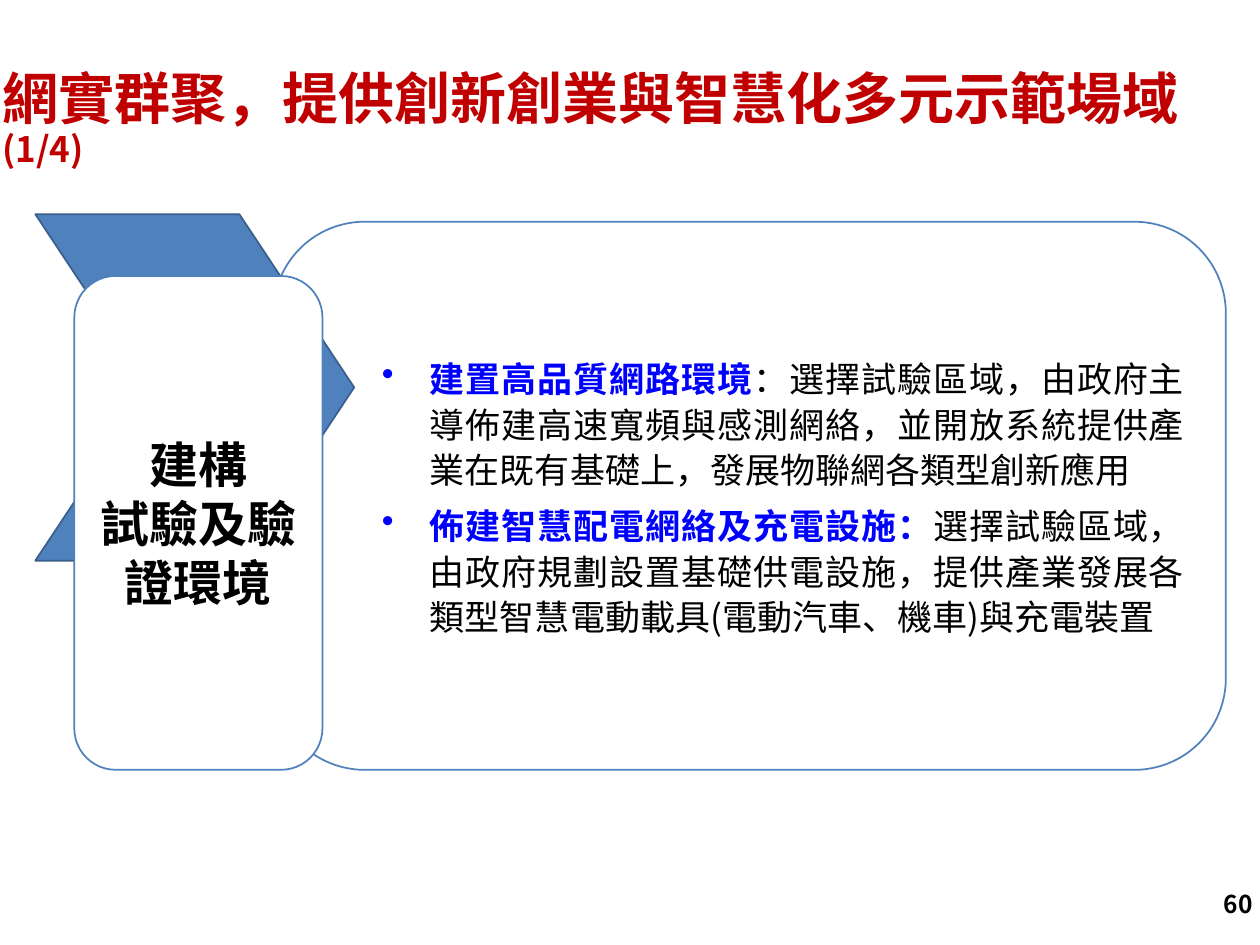
"""Build the slide on demonstration fields for testing and verification."""
from dataclasses import dataclass

import lxml.etree
import pptx
import pptx.dml.color
import pptx.enum.shapes
import pptx.enum.text
import pptx.oxml.ns
import pptx.util

Pt = pptx.util.Pt
Align = pptx.enum.text.PP_ALIGN
Preset = pptx.enum.shapes.MSO_SHAPE

SANS = "Noto Sans CJK SC"
MONO = "Noto Sans Mono"
BLACK, WHITE, RED = "000000", "FFFFFF", "C00000"
EMPHASIS, ACCENT, ACCENT_EDGE = "0000FF", "4F81BD", "3A5F8C"


@dataclass(frozen=True)
class Box:
    left: float
    top: float
    width: float
    height: float

    def lengths(self) -> list:
        return [Pt(n) for n in (self.left, self.top, self.width, self.height)]


@dataclass(frozen=True)
class Panel:
    box: Box
    preset: int
    fill: str
    edge: str


@dataclass(frozen=True)
class Measure:
    heading: str
    detail: str


CONTENT = Panel(Box(156.2, 126.7, 544.3, 313.2), Preset.ROUNDED_RECTANGLE, WHITE, ACCENT)
ARROW = Panel(Box(20.2, 122.4, 182.2, 198), Preset.CHEVRON, ACCENT, ACCENT_EDGE)
LABEL = Panel(Box(42.5, 157.7, 141.8, 282.2), Preset.ROUNDED_RECTANGLE, WHITE, ACCENT)
TITLE_BOX = Box(-5.8, 31, 730.8, 75.6)
NUMBER_BOX = Box(555.1, 501.8, 167.8, 28.8)

MEASURES = [
    Measure("建置高品質網路環境",
            "：選擇試驗區域，由政府主導佈建高速寬頻與感測網絡，"
            "並開放系統提供產業在既有基礎上，發展物聯網各類型創新應用"),
    Measure("佈建智慧配電網絡及充電設施：",
            "選擇試驗區域，由政府規劃設置基礎供電設施，"
            "提供產業發展各類型智慧電動載具(電動汽車、機車)與充電裝置"),
]


def rgb(code: str) -> pptx.dml.color.RGBColor:
    return pptx.dml.color.RGBColor.from_string(code)


def add_panel(slide, panel: Panel):
    shape = slide.shapes.add_shape(panel.preset, *panel.box.lengths())
    shape.shadow.inherit = False
    shape.fill.solid()
    shape.fill.fore_color.rgb = rgb(panel.fill)
    shape.line.color.rgb = rgb(panel.edge)
    shape.line.width = Pt(1)
    return shape


def prepare_frame(shape, left: float = 7.2, right: float = 7.2, vertical: float = 3.6):
    frame = shape.text_frame
    frame.word_wrap = True
    frame.vertical_anchor = pptx.enum.text.MSO_ANCHOR.MIDDLE
    frame.margin_left, frame.margin_right = Pt(left), Pt(right)
    frame.margin_top = frame.margin_bottom = Pt(vertical)
    return frame


def next_paragraph(frame, index: int):
    return frame.add_paragraph() if index else frame.paragraphs[0]


def set_font(paragraph, face: str, color: str, size: float | None = None,
             bold: bool | None = None) -> None:
    font = paragraph.font
    font.name, font.size, font.bold = face, Pt(size) if size else None, bold
    font.color.rgb = rgb(color)
    defaults = paragraph._p.pPr.find(pptx.oxml.ns.qn("a:defRPr"))
    east_asian = lxml.etree.SubElement(defaults, pptx.oxml.ns.qn("a:ea"))
    east_asian.set("typeface", SANS)


def add_run(paragraph, text: str, **settings):
    run = paragraph.add_run()
    run.text = text
    for name, value in settings.items():
        setattr(run.font, name, value)
    return run


def add_bullet(paragraph, margin: float, indent: float) -> None:
    properties = paragraph._p.get_or_add_pPr()
    properties.set("marL", str(Pt(margin)))
    properties.set("indent", str(Pt(indent)))
    bullet = lxml.etree.SubElement(properties, pptx.oxml.ns.qn("a:buChar"))
    bullet.set("char", "•")


def add_measures(slide) -> None:
    frame = prepare_frame(add_panel(slide, CONTENT), 17.3, 8.6, 0)
    for index, measure in enumerate(MEASURES):
        paragraph = next_paragraph(frame, index)
        paragraph.alignment = Align.JUSTIFY
        paragraph.line_spacing = Pt(26)
        if index:
            paragraph.space_before = Pt(6)
        add_bullet(paragraph, 56.9, -27.4)
        set_font(paragraph, SANS, BLACK, 20)
        heading = add_run(paragraph, measure.heading, bold=True)
        heading.font.color.rgb = rgb(EMPHASIS)
        detail = add_run(paragraph, measure.detail, bold=False)
        detail.font.color.rgb = rgb(BLACK)


def add_label(slide) -> None:
    frame = prepare_frame(add_panel(slide, LABEL), 0, 0, 0)
    for index, text in enumerate(["建構", "試驗及驗證環境"]):
        paragraph = next_paragraph(frame, index)
        paragraph.alignment = Align.CENTER
        set_font(paragraph, MONO, BLACK, 28, True)
        add_run(paragraph, text)


def add_title(slide) -> None:
    title = prepare_frame(slide.shapes.add_textbox(*TITLE_BOX.lengths())).paragraphs[0]
    title.line_spacing = 0.9
    set_font(title, SANS, RED, bold=True)
    add_run(title, "網實群聚，提供創新創業與智慧化多元示範場域", size=Pt(32))
    add_run(title, "(1/4)", size=Pt(20))


def add_page_number(slide) -> None:
    number = prepare_frame(slide.shapes.add_textbox(*NUMBER_BOX.lengths())).paragraphs[0]
    number.alignment = Align.RIGHT
    set_font(number, SANS, BLACK, 14, True)
    add_run(number, "60")


def main() -> None:
    deck = pptx.Presentation()
    deck.slide_width, deck.slide_height = Pt(720), Pt(540)
    slide = deck.slides.add_slide(deck.slide_layouts[6])
    add_measures(slide)
    add_panel(slide, ARROW).adjustments[0] = 0.36
    add_label(slide)
    add_title(slide)
    add_page_number(slide)
    deck.save("out.pptx")


if __name__ == "__main__":
    main()
